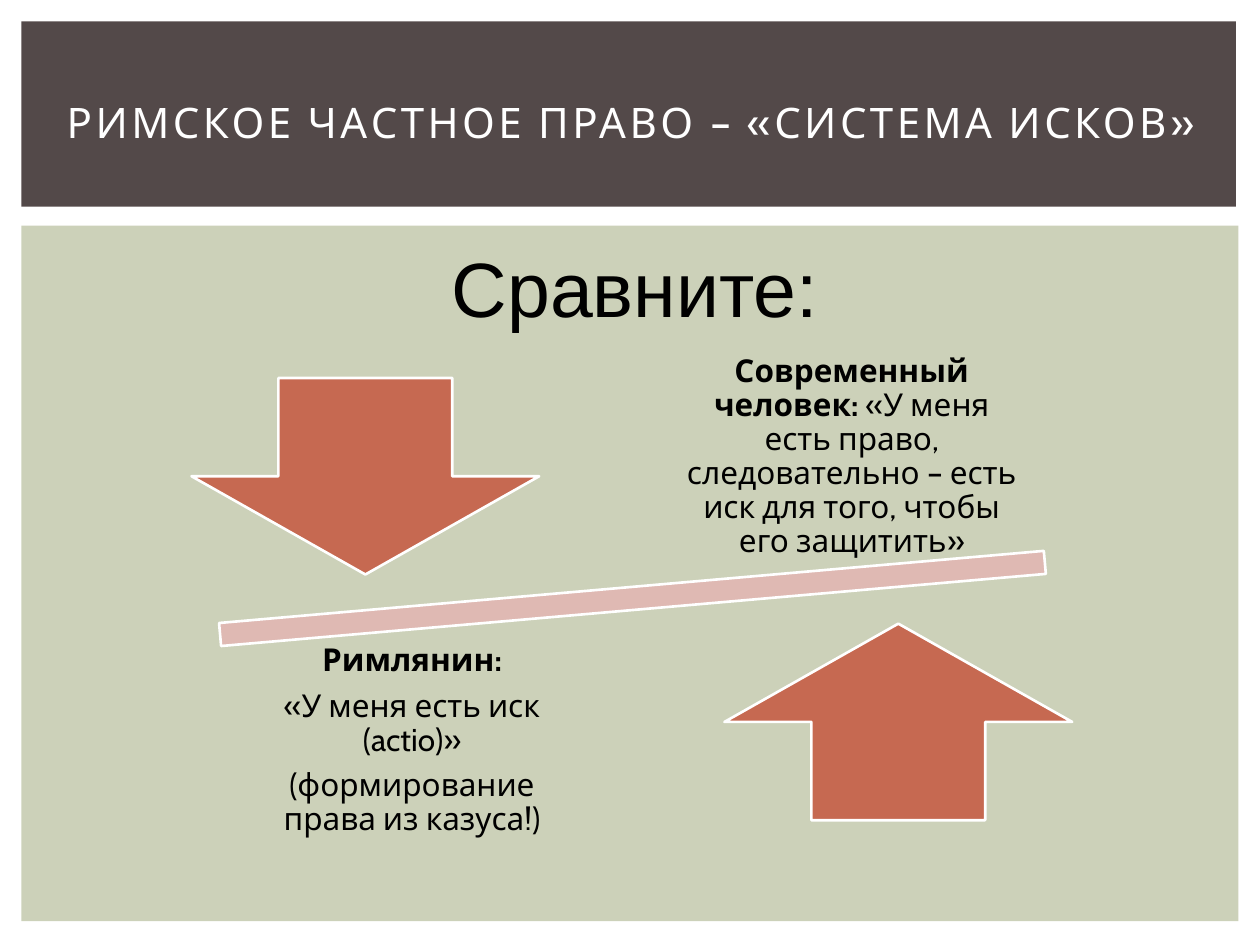
"""Build a slide comparing Roman and modern views of a legal claim."""
from dataclasses import dataclass
from typing import Optional

from pptx import Presentation
from pptx.dml.color import RGBColor
from pptx.enum.shapes import MSO_SHAPE as Preset
from pptx.enum.text import MSO_ANCHOR as Anchor, MSO_AUTO_SIZE as AutoSize, PP_ALIGN as Align
from pptx.util import Inches, Pt

COLORS = {
    "background": "CCD1B9",
    "band": "534949",
    "bar": "DFB9B3",
    "arrow": "C66951",
    "white": "FFFFFF",
    "black": "000000",
}
Box = tuple[float, float, float, float]
Runs = list[tuple[str, bool]]


@dataclass
class Figure:
    preset: Preset
    box: Box
    fill: str
    outline: Optional[str] = None
    rotation: float = 0


@dataclass
class Caption:
    box: Box
    paragraphs: list[Runs]
    size: float = 18
    font: str = "Cabin"
    color: str = "black"
    inset: float = 0.14
    anchor: Anchor = Anchor.MIDDLE
    line_spacing: float = 0.9
    space_after: float = 6.3
    tracking: int = 0


FIGURES = [
    Figure(Preset.RECTANGLE, (0.17, 1.79, 9.66, 5.52), "background"),
    Figure(Preset.RECTANGLE, (0.17, 0.17, 9.64, 1.47), "band"),
    Figure(Preset.MATH_MINUS, (0.55, 4.36, 8.94, 0.78), "bar", "white", 355),
    Figure(Preset.DOWN_ARROW, (1.52, 3, 2.76, 1.56), "arrow", "white"),
    Figure(Preset.UP_ARROW, (5.75, 4.95, 2.76, 1.56), "arrow", "white"),
]
TITLE = Caption(
    (0.42, 0.39, 9.17, 1.15),
    [[("РИМСКОЕ ЧАСТНОЕ ПРАВО – «СИСТЕМА ИСКОВ»", False)]],
    size=24, color="white", inset=0.05, line_spacing=1, space_after=0, tracking=200,
)
CAPTIONS = [
    Caption((5.29, 2.81, 2.94, 1.64), [[
        ("Современный человек:", True),
        (" «У меня есть право, следовательно – есть иск для того, чтобы его защитить»", False),
    ]]),
    Caption((1.8, 5.06, 2.94, 1.64), [
        [("Римлянин:", True)],
        [("«У меня есть иск (actio)»", False)],
        [("(формирование права из казуса!)", False)],
    ]),
    Caption((2.54, 1.86, 5, 0.84), [[("Сравните:", False)]], size=44, font="Arial",
            inset=0.05, anchor=Anchor.TOP, line_spacing=1, space_after=0),
]


def set_values(target, values: dict) -> None:
    for name, value in values.items():
        setattr(target, name, value)


def color_of(name: str) -> RGBColor:
    return RGBColor.from_string(COLORS[name])


def draw_figure(slide, figure: Figure) -> None:
    shape = slide.shapes.add_shape(figure.preset, *map(Inches, figure.box))
    shape.shadow.inherit = False
    shape.rotation = figure.rotation
    shape.fill.solid()
    shape.fill.fore_color.rgb = color_of(figure.fill)
    if figure.outline:
        shape.line.color.rgb = color_of(figure.outline)
        shape.line.width = Pt(1.5)
    else:
        shape.line.fill.background()


def write_caption(shape, caption: Caption) -> None:
    frame = shape.text_frame
    inset = Inches(caption.inset)
    set_values(frame, {
        "word_wrap": True, "auto_size": AutoSize.NONE, "vertical_anchor": caption.anchor,
        "margin_left": inset, "margin_right": inset,
        "margin_top": inset, "margin_bottom": inset,
    })
    for index, runs in enumerate(caption.paragraphs):
        paragraph = frame.add_paragraph() if index else frame.paragraphs[0]
        set_values(paragraph, {
            "alignment": Align.CENTER, "line_spacing": caption.line_spacing,
            "space_before": Pt(0), "space_after": Pt(caption.space_after),
        })
        for text, bold in runs:
            run = paragraph.add_run()
            run.text = text
            set_values(run.font, {"name": caption.font, "size": Pt(caption.size), "bold": bold})
            run.font.color.rgb = color_of(caption.color)
            if caption.tracking:
                run.font._element.set("spc", str(caption.tracking))


def place_title(slide, caption: Caption) -> None:
    title = slide.shapes.title
    title.element.getparent().append(title.element)
    set_values(title, dict(zip(("left", "top", "width", "height"), map(Inches, caption.box))))
    write_caption(title, caption)


def main() -> None:
    presentation = Presentation()
    set_values(presentation, {"slide_width": Inches(10), "slide_height": Inches(7.5)})
    slide = presentation.slides.add_slide(presentation.slide_layouts[5])
    for figure in FIGURES:
        draw_figure(slide, figure)
    place_title(slide, TITLE)
    for caption in CAPTIONS:
        write_caption(slide.shapes.add_textbox(*map(Inches, caption.box)), caption)
    presentation.save("out.pptx")


if __name__ == "__main__":
    main()
